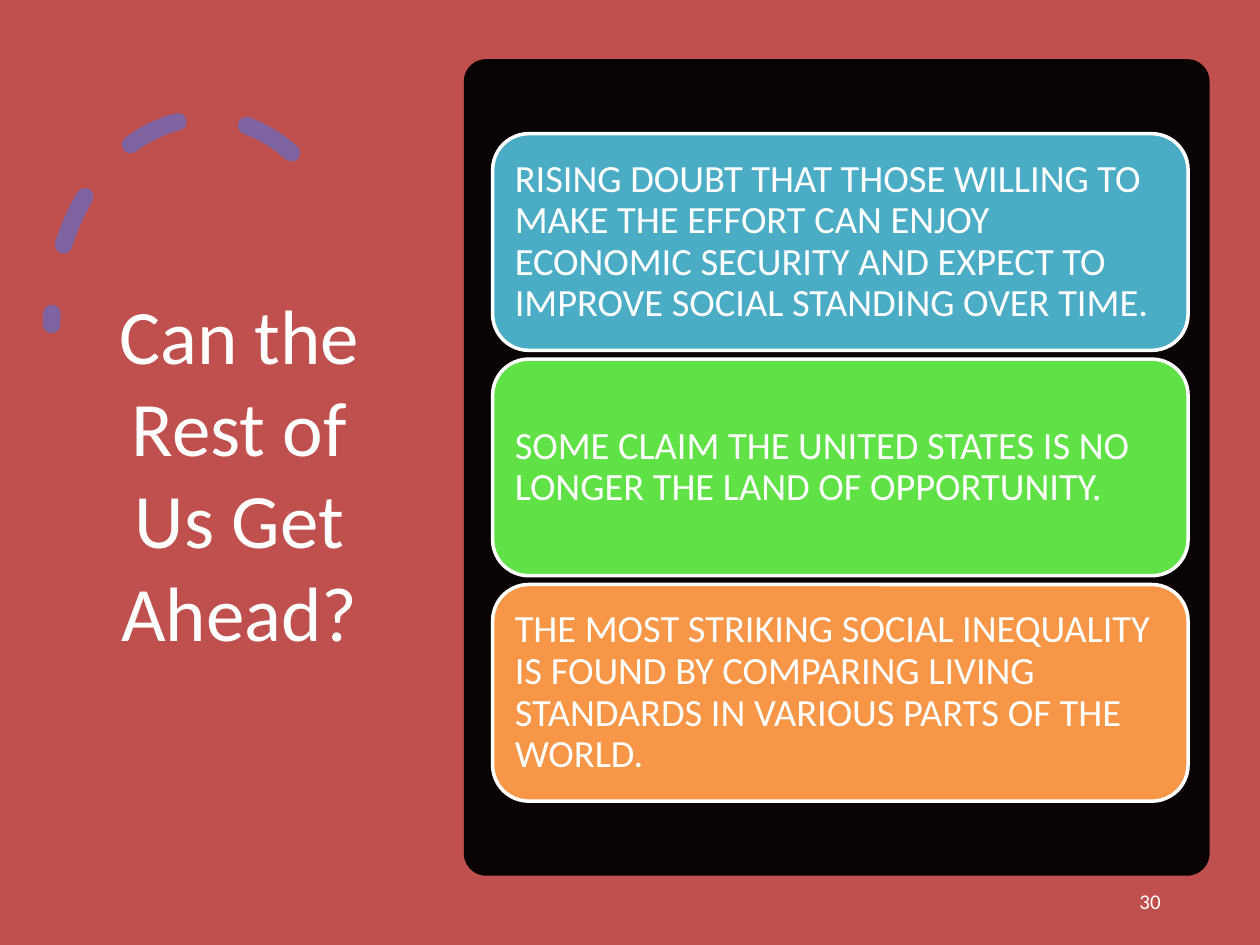
"""Build the slide asking whether the rest of us can get ahead."""
from lxml.etree import SubElement
from pptx import Presentation
from pptx.dml.color import RGBColor
from pptx.enum.dml import MSO_LINE
from pptx.enum.shapes import MSO_SHAPE as SHAPE
from pptx.enum.text import MSO_ANCHOR as ANCHOR, PP_ALIGN as ALIGN
from pptx.oxml.ns import qn
from pptx.util import Pt


def paint(fill, color):
    fill.solid()
    fill.fore_color.rgb = RGBColor.from_string(color)


def write(holder, text, size, align, inset=7.2, inset_y=3.6, spacing=1.0, after=0):
    frame = holder.text_frame
    frame.word_wrap = True
    frame.vertical_anchor = ANCHOR.MIDDLE
    frame.margin_left = frame.margin_right = Pt(inset)
    frame.margin_top = frame.margin_bottom = Pt(inset_y)
    line = frame.paragraphs[0]
    line.alignment = align
    line.line_spacing = spacing
    line.space_after = Pt(after)
    run = line.add_run()
    run.text = text
    run.font.name = "Calibri"
    run.font.size = Pt(size)
    paint(run.font.fill, "FFFFFF")


deck = Presentation()
deck.slide_width, deck.slide_height = Pt(720), Pt(540)
slide = deck.slides.add_slide(deck.slide_layouts[6])
paint(slide.background.fill, "000000")
shapes = slide.shapes

backdrop = shapes.add_shape(SHAPE.RECTANGLE, 0, 0, Pt(720), Pt(540))
backdrop.shadow.inherit = False
paint(backdrop.fill, "C0504D")
backdrop.line.fill.background()

arc = shapes.add_shape(SHAPE.ARC, Pt(29.5), Pt(67.7), Pt(176.4), Pt(235.4))
arc.shadow.inherit = False
arc.adjustments[0] = 146.13
arc.adjustments[1] = 0
arc.fill.background()
paint(arc.line.fill, "8064A2")
arc.line.width = Pt(10)
arc.line.dash_style = MSO_LINE.DASH
arc.line._get_or_add_ln().set("cap", "rnd")
arc._element.spPr.xfrm.set("flipH", "1")

title = shapes.add_textbox(Pt(49.7), Pt(50.4), Pt(174.2), Pt(438.5))
write(title, "Can the Rest of Us Get Ahead?", 44, ALIGN.CENTER)

panel = shapes.add_shape(SHAPE.ROUNDED_RECTANGLE, Pt(265), Pt(33.8), Pt(426.2), Pt(466.6))
panel.shadow.inherit = False
panel.adjustments[0] = 0.03
paint(panel.fill, "000000")
panel_color = panel._element.spPr.find(qn("a:solidFill"))[0]
SubElement(panel_color, qn("a:alpha")).set("val", "95000")
panel.line.fill.background()

page_number = shapes.add_textbox(Pt(508.3), Pt(500.4), Pt(162), Pt(28.8))
write(page_number, "30", 12, ALIGN.RIGHT, after=6)

claims = [
    ("4BACC6", "RISING DOUBT THAT THOSE WILLING TO MAKE THE EFFORT CAN ENJOY "
               "ECONOMIC SECURITY AND EXPECT TO IMPROVE SOCIAL STANDING OVER TIME."),
    ("60E146", "SOME CLAIM THE UNITED STATES IS NO LONGER THE LAND OF OPPORTUNITY."),
    ("F79646", "THE MOST STRIKING SOCIAL INEQUALITY IS FOUND BY COMPARING LIVING "
               "STANDARDS IN VARIOUS PARTS OF THE WORLD."),
]
for index, (color, claim) in enumerate(claims):
    card = shapes.add_shape(SHAPE.ROUNDED_RECTANGLE, Pt(281.5), Pt(76.4 + 128.8 * index),
                            Pt(397.4), Pt(123.8))
    card.shadow.inherit = False
    paint(card.fill, color)
    paint(card.line.fill, "FFFFFF")
    card.line.width = Pt(2)
    write(card, claim, 22, ALIGN.LEFT, inset=6.6, inset_y=6.6, spacing=0.9, after=7.7)

deck.save("out.pptx")
